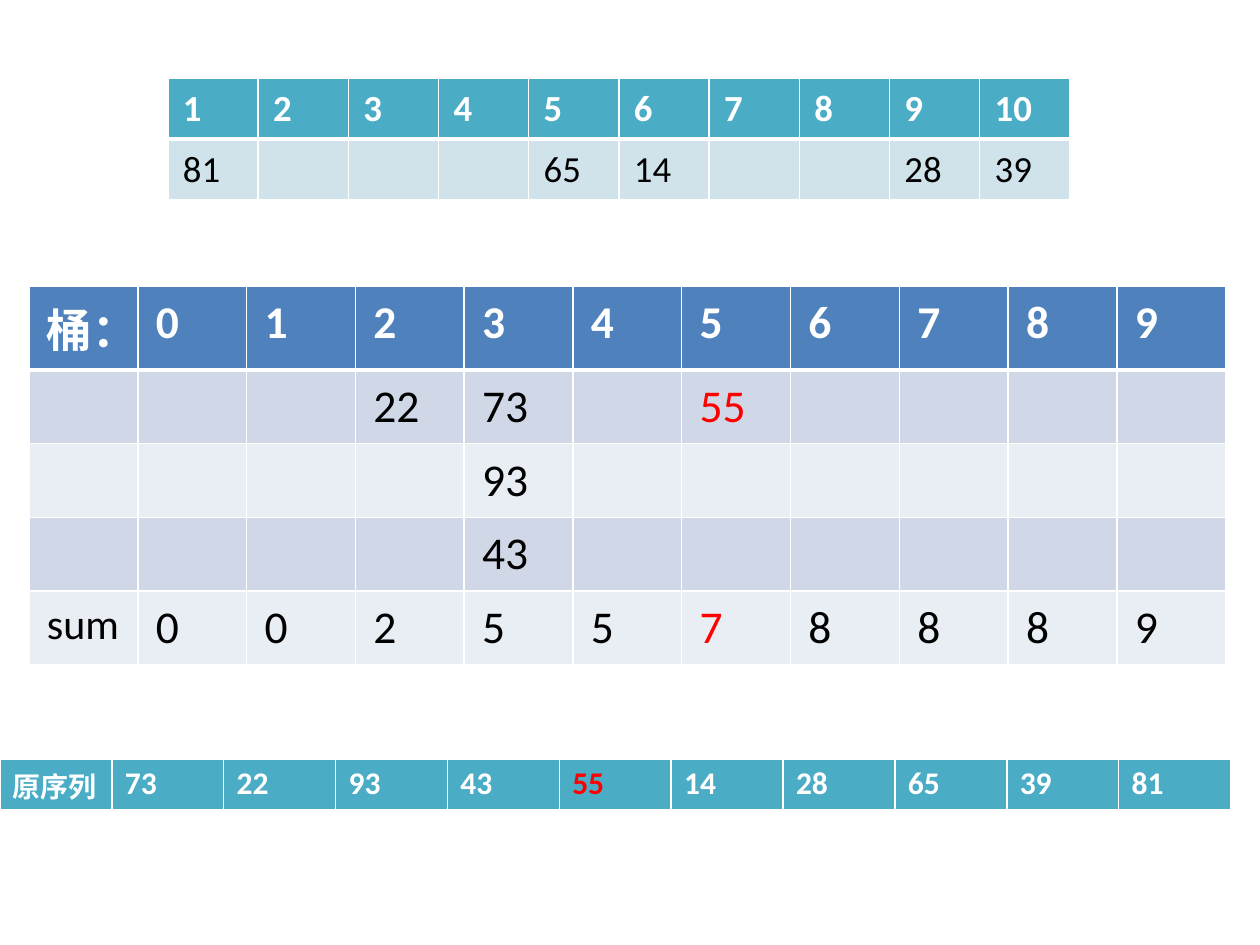
from dataclasses import dataclass

from lxml import etree
from pptx import Presentation
from pptx.dml.color import RGBColor
from pptx.oxml import ns
from pptx.util import Pt

PX = 914400 // 126  # EMU per px


@dataclass(frozen=True)
class Theme:
    font: str = "Calibri"
    white: str = "FFFFFF"
    black: str = "000000"
    red: str = "FF0000"
    blue: tuple = ("4F81BD", "D0D8E8", "E9EDF4")  # header, odd rows, even rows
    teal: tuple = ("4BACC6", "D0E3EA", "D0E3EA")
    bucket_size: int = 26
    sum_size: int = 24
    index_size: int = 21
    strip_size: int = 18
    strip_label_size: int = 16
    thin: int = 1
    thick: int = 3


THEME = Theme()


def px(n):
    return n * PX


def set_borders(cell, widths):
    """Draw white cell edges; widths maps L, R, T, B to points."""
    tc_pr = cell._tc.get_or_add_tcPr()
    for side, width in widths.items():
        ln = etree.SubElement(tc_pr, ns.qn(f"a:ln{side}"), w=str(Pt(width)))
        fill = etree.SubElement(ln, ns.qn("a:solidFill"))
        etree.SubElement(fill, ns.qn("a:srgbClr"), val=THEME.white)


def write_cell(cell, label, size, color, bold):
    p = cell.text_frame.paragraphs[0]
    font = p.font
    if label:
        r = p.add_run()
        r.text = label
        font = r.font
    font.color.rgb = RGBColor.from_string(color)
    style = {"name": THEME.font, "size": Pt(size), "bold": bold}
    for name, value in style.items():
        setattr(font, name, value)


def add_grid(s, rows, box, inset, fills, size, red=(), sizes=None):
    """Add a table with a header row; red and sizes are keyed by (row, column)."""
    left, top, width, row_height = map(px, box)
    n_rows, n_cols = len(rows), len(rows[0])
    table = s.shapes.add_table(
        n_rows, n_cols, left, top, width, row_height * n_rows).table
    table.horz_banding = False
    across, down = map(px, inset)
    margins = {"margin_left": across, "margin_right": across,
               "margin_top": down, "margin_bottom": down}
    for i, labels in enumerate(rows):
        table.rows[i].height = row_height
        header = i == 0
        base = THEME.white if header else THEME.black
        fill = fills[0] if header else fills[2 - i % 2]
        edges = {"L": THEME.thin, "R": THEME.thin,
                 "T": THEME.thick if i == 1 else THEME.thin,
                 "B": THEME.thick if header else THEME.thin}
        for j, label in enumerate(labels):
            cell = table.cell(i, j)
            for name, value in margins.items():
                setattr(cell, name, value)
            set_borders(cell, edges)
            cell.fill.solid()
            cell.fill.fore_color.rgb = RGBColor.from_string(fill)
            write_cell(cell, label, (sizes or {}).get((i, j), size),
                       THEME.red if (i, j) in red else base, header)


def sparse_row(count, values):
    return [values.get(j, "") for j in range(count)]


def main():
    prs = Presentation()
    prs.slide_width, prs.slide_height = px(1260), px(945)
    s = prs.slides.add_slide(prs.slide_layouts[6])

    # Buckets by last digit, with running sums
    buckets = [
        ["桶："] + [str(d) for d in range(10)],
        sparse_row(11, {3: "22", 4: "73", 6: "55"}),
        sparse_row(11, {4: "93"}),
        sparse_row(11, {4: "43"}),
        ["sum", *"0025578889"],
    ]
    add_grid(s, buckets, (29, 286, 1197, 73), (18, 9), THEME.blue,
             THEME.bucket_size, red={(1, 6), (4, 6)},
             sizes={(4, 0): THEME.sum_size})

    # Output positions filled so far
    positions = [
        [str(n) for n in range(1, 11)],
        sparse_row(10, {0: "81", 4: "65", 5: "14", 8: "28", 9: "39"}),
    ]
    add_grid(s, positions, (168, 78, 902, 61), (15, 8), THEME.teal,
             THEME.index_size)

    # Input sequence
    sequence = [["原序列", *"73 22 93 43 55 14 28 65 39 81".split()]]
    add_grid(s, sequence, (0, 759, 1231, 51), (13, 6), THEME.teal,
             THEME.strip_size, red={(0, 5)},
             sizes={(0, 0): THEME.strip_label_size})

    prs.save("out.pptx")


if __name__ == "__main__":
    main()
